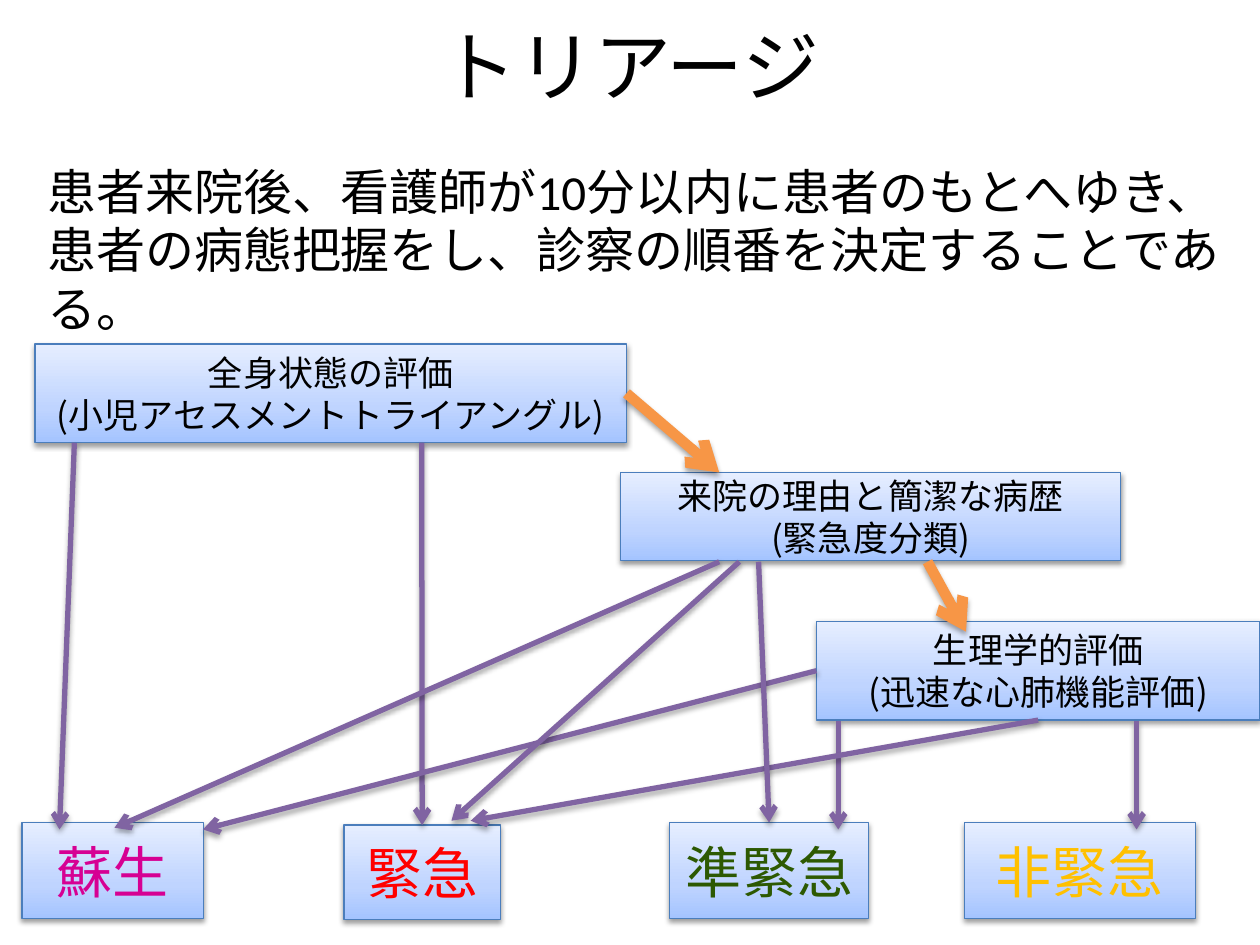
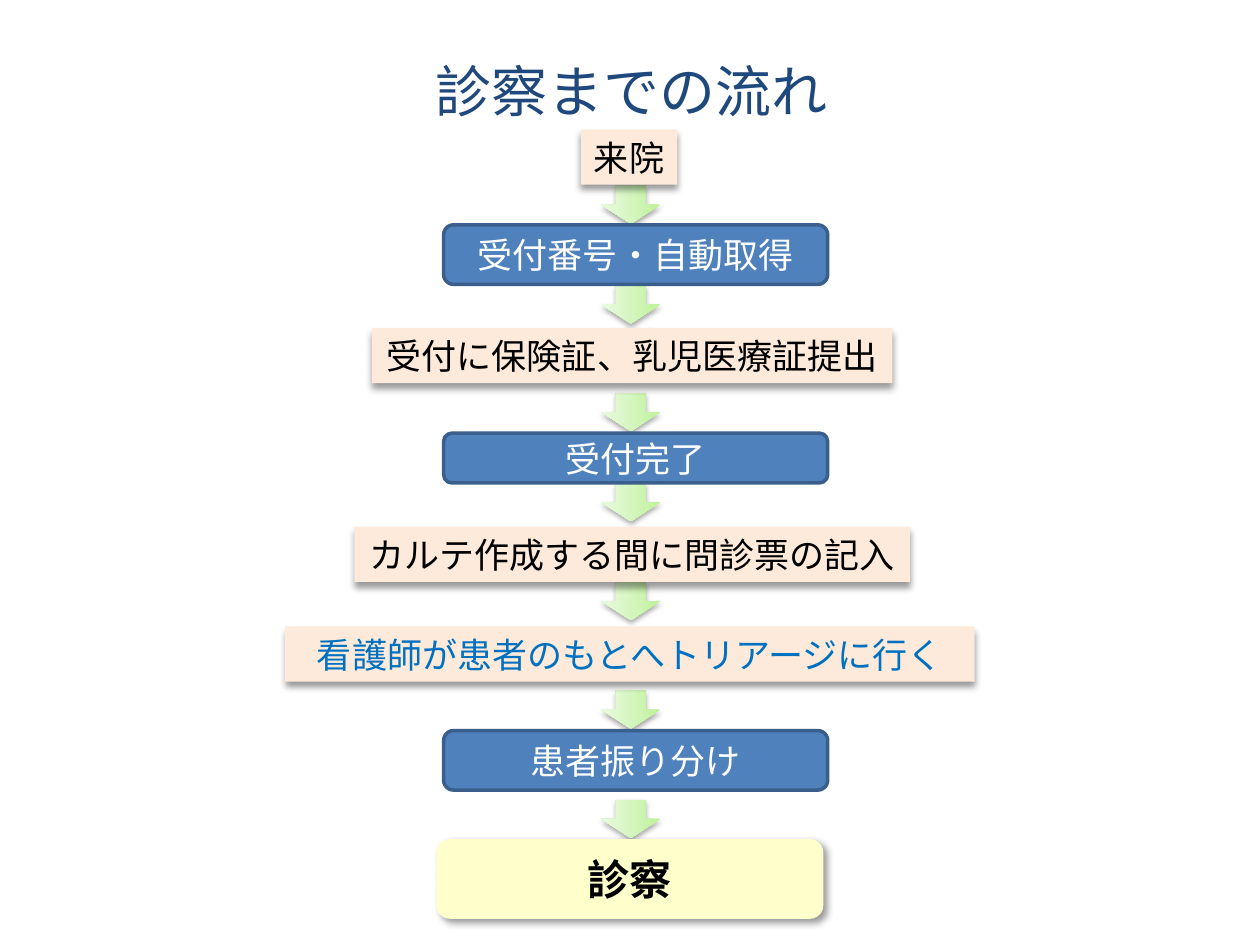
from dataclasses import dataclass

from lxml import etree
from pptx import Presentation
from pptx.dml.color import RGBColor
from pptx.enum.shapes import MSO_CONNECTOR, MSO_SHAPE
from pptx.enum.text import MSO_ANCHOR, PP_ALIGN
from pptx.oxml.ns import qn
from pptx.util import Pt

RECTANGLE = MSO_SHAPE.RECTANGLE
ROUNDED = MSO_SHAPE.ROUNDED_RECTANGLE
DOWN_ARROW = MSO_SHAPE.DOWN_ARROW
STRAIGHT = MSO_CONNECTOR.STRAIGHT
MIDDLE = MSO_ANCHOR.MIDDLE
TOP_ANCHOR = MSO_ANCHOR.TOP
CENTER = PP_ALIGN.CENTER
LEFT_ALIGN = PP_ALIGN.LEFT
TOP, LEFT, BOTTOM, RIGHT = range(4)


@dataclass(frozen=True)
class Theme:
    latin: str = "Calibri"
    japanese: str = "Noto Sans CJK JP"
    black: str = "000000"
    white: str = "FFFFFF"
    navy: str = "1F497D"
    blue_text: str = "0070C0"
    box_line: str = "4B7EBC"
    step_fill: str = "4F81BD"
    step_line: str = "3A5F8C"
    note_fill: str = "FDEADA"
    goal_fill: str = "FFFFCC"
    orange: str = "F79646"
    purple: str = "8064A2"
    blue_gradient: tuple = ((0, "A4C4FF"), (35, "BFD4FF"), (100, "E6EEFF"))
    green_gradient: tuple = ((0, "BEF297"), (50, "D5F6C0"), (100, "EAFAE0"))
    box_shadow: tuple = (38, 3.1, 1.6, 90)
    arrow_shadow: tuple = (35, 3.1, 1.8, 90)
    note_shadow: tuple = (40, 4, 3, 90)
    goal_shadow: tuple = (40, 4, 3, 45)
    title: int = 44
    small_title: int = 32
    category: int = 32
    lead: int = 28
    goal: int = 24
    body: int = 20


THEME = Theme()


def color(code):
    return RGBColor.from_string(code)


def add_color(parent, code):
    return etree.SubElement(parent, qn("a:srgbClr"), val=code)


def cast_shadow(properties, shadow):
    alpha, blur, distance, angle = shadow
    effects = properties.find(qn("a:effectLst"))
    if effects is None:
        effects = etree.SubElement(properties, qn("a:effectLst"))
    outer = etree.SubElement(
        effects, qn("a:outerShdw"), blurRad=str(Pt(blur)), dist=str(Pt(distance)),
        dir=str(angle * 60000), rotWithShape="0")
    etree.SubElement(add_color(outer, THEME.black), qn("a:alpha"), val=str(alpha * 1000))


def fill_gradient(shape, stops, angle):
    shape.fill.gradient()
    shape.fill.gradient_angle = angle
    stop_list = shape._element.spPr.find(qn("a:gradFill")).find(qn("a:gsLst"))
    for stop in list(stop_list):
        stop_list.remove(stop)
    for position, code in stops:
        add_color(etree.SubElement(stop_list, qn("a:gs"), pos=str(position * 1000)), code)


def write_text(shape, lines, size, code, name=THEME.japanese, bold=False,
               align=CENTER, anchor=MIDDLE, wrap=True):
    frame = shape.text_frame
    frame.word_wrap = wrap
    frame.vertical_anchor = anchor
    frame.text = "\n".join(lines)
    for paragraph in frame.paragraphs:
        paragraph.alignment = align
        font = paragraph.font
        font.name = name
        font.size = Pt(size)
        font.bold = bold
        font.color.rgb = color(code)
        etree.SubElement(font._element, qn("a:ea"), typeface=THEME.japanese)


def add_title_slide(deck, title, place, size, code):
    slide = deck.slides.add_slide(deck.slide_layouts[5])
    holder = slide.shapes.title
    holder.left, holder.top, holder.width, holder.height = map(Pt, place)
    write_text(holder, [title], size, code, THEME.latin)
    return slide


def add_shape(slide, kind, place, fill=None, line=None, line_width=0, shadow=None):
    shape = slide.shapes.add_shape(kind, *map(Pt, place))
    shape.shadow.inherit = False
    if fill:
        shape.fill.solid()
        shape.fill.fore_color.rgb = color(fill)
    if line:
        shape.line.color.rgb = color(line)
        shape.line.width = Pt(line_width)
    else:
        shape.line.fill.background()
    if shadow:
        cast_shadow(shape._element.spPr, shadow)
    return shape


def add_triage_box(slide, place, lines, size=THEME.body, code=THEME.black):
    box = add_shape(slide, RECTANGLE, place, line=THEME.box_line, line_width=0.75,
                    shadow=THEME.box_shadow)
    fill_gradient(box, THEME.blue_gradient, 90)
    write_text(box, lines, size, code)
    return box


def add_arrow(slide, start, end, code=THEME.purple, width=3, begin=None, finish=None):
    arrow = slide.shapes.add_connector(STRAIGHT, *map(Pt, start + end))
    if begin:
        arrow.begin_connect(*begin)
    if finish:
        arrow.end_connect(*finish)
    arrow.line.color.rgb = color(code)
    arrow.line.width = Pt(width)
    etree.SubElement(arrow.line._get_or_add_ln(), qn("a:tailEnd"), type="arrow")
    cast_shadow(arrow._element.spPr, THEME.arrow_shadow)


def add_down_arrow(slide, top):
    arrow = add_shape(slide, DOWN_ARROW, (343.5, top, 34, 22), shadow=THEME.arrow_shadow)
    fill_gradient(arrow, THEME.green_gradient, 180)


def add_note(slide, text, left, top, width, code=THEME.black):
    note = add_shape(slide, RECTANGLE, (left, top, width, 31.5), THEME.note_fill,
                     shadow=THEME.note_shadow)
    write_text(note, [text], THEME.body, code, wrap=False)


def add_step(slide, text, top, height):
    step = add_shape(slide, ROUNDED, (253.5, top, 219.5, height), THEME.step_fill,
                     THEME.step_line, 2)
    write_text(step, [text], THEME.body, THEME.white, THEME.latin)


def build_triage(deck):
    slide = add_title_slide(deck, "トリアージ", (36, -8, 648, 90), THEME.title, THEME.black)
    lead = slide.shapes.add_textbox(*map(Pt, (20, 88.5, 690.5, 75)))
    write_text(lead, ["患者来院後、看護師が10分以内に患者のもとへゆき、",
                      "患者の病態把握をし、診察の順番を決定することである。"],
               THEME.lead, THEME.black, THEME.latin, align=LEFT_ALIGN, anchor=TOP_ANCHOR)

    general = add_triage_box(slide, (20, 196.5, 338, 56.5),
                             ["全身状態の評価", "(小児アセスメントトライアングル)"])
    add_triage_box(slide, (354.5, 270, 286, 50.5),
                   ["来院の理由と簡潔な病歴", "(緊急度分類)"])
    physiology = add_triage_box(slide, (466.5, 355, 253.5, 56.5),
                                ["生理学的評価", "(迅速な心肺機能評価)"])

    categories = [
        ("蘇生", (12.5, 470, 104, 55), "D60093"),
        ("緊急", (196.5, 471.5, 89.5, 54), "FF0000"),
        ("準緊急", (382.5, 470, 114, 55), "2D5902"),
        ("非緊急", (551, 470, 132, 55), "FFC000"),
    ]
    boxes = {text: add_triage_box(slide, place, [text], THEME.category, code)
             for text, place, code in categories}

    add_arrow(slide, (358, 225), (411, 270), THEME.orange, 6, begin=(general, RIGHT))
    add_arrow(slide, (530, 321), (552, 361), THEME.orange, 6)
    for start, end, begin, finish in [
        ((42.5, 253), (34, 474), None, None),
        ((479, 412), (479, 474), None, None),
        ((649.5, 412), (649.5, 474), None, None),
        ((241, 253), (241, 471.5), None, (boxes["緊急"], TOP)),
        ((411, 321), (65.5, 473), None, None),
        ((593, 411.5), (269, 469), (physiology, BOTTOM), None),
        ((466.5, 383), (116, 474), (physiology, LEFT), None),
        ((433.5, 321), (439.5, 470), None, (boxes["準緊急"], TOP)),
        ((422.5, 321), (258, 469), None, None),
    ]:
        add_arrow(slide, start, end, begin=begin, finish=finish)


def build_flow(deck):
    slide = add_title_slide(deck, "診察までの流れ", (78.5, 15, 565, 73.5),
                            THEME.small_title, THEME.navy)
    for top in (106, 163, 224.5, 276, 332.5, 394.5, 457):
        add_down_arrow(slide, top)

    add_note(slide, "来院", 332, 74, 55)
    add_note(slide, "受付に保険証、乳児医療証提出", 212.5, 187.5, 297.5)
    add_note(slide, "カルテ作成する間に問診票の記入", 202.5, 301, 317.5)
    add_note(slide, "看護師が患者のもとへトリアージに行く", 163, 358, 394, THEME.blue_text)

    add_step(slide, "受付番号・自動取得", 128.5, 34)
    add_step(slide, "受付完了", 247.5, 28.5)
    add_step(slide, "患者振り分け", 417.5, 34)

    goal = add_shape(slide, ROUNDED, (249.5, 479.5, 221, 45.5), THEME.goal_fill,
                     shadow=THEME.goal_shadow)
    write_text(goal, ["診察"], THEME.goal, THEME.black, THEME.latin, bold=True)


def main():
    deck = Presentation()
    deck.slide_width, deck.slide_height = Pt(720), Pt(540)
    build_triage(deck)
    build_flow(deck)
    deck.save("out.pptx")


if __name__ == "__main__":
    main()
